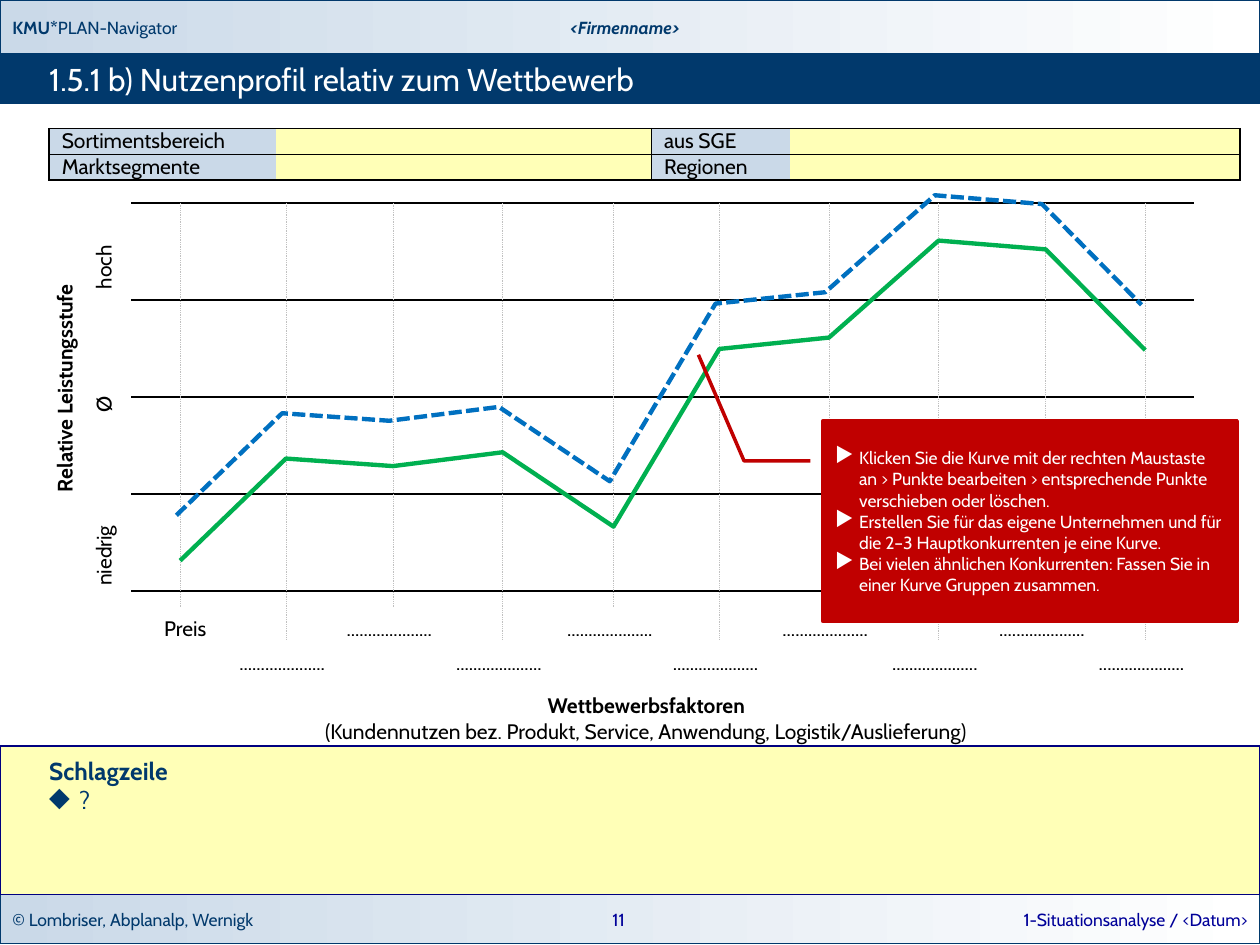
import pptx
import pptx.util
import pptx.dml.color
import pptx.enum.dml
import pptx.enum.shapes
import pptx.enum.text
import pptx.oxml
import pptx.oxml.ns
import lxml.etree as etree

Inches = pptx.util.Inches
Pt = pptx.util.Pt
SHAPE = pptx.enum.shapes.MSO_SHAPE
ALIGN = pptx.enum.text.PP_ALIGN
MIDDLE = pptx.enum.text.MSO_ANCHOR.MIDDLE
TOP = pptx.enum.text.MSO_ANCHOR.TOP
DASH = pptx.enum.dml.MSO_LINE
qn = pptx.oxml.ns.qn

NAVY, PALE, CREAM, RED = "01396C", "CAD9E8", "FFFFB7", "C00000"
BLACK, WHITE, BLUE = "000000", "FFFFFF", "000099"


def color(code):
    return pptx.dml.color.RGBColor.from_string(code)


def style(par, size, code, bold=False, slant=False, align=ALIGN.LEFT):
    par.alignment = align
    for run in par.runs:
        font = run.font
        font.name, font.size, font.bold, font.italic = "Cabin", Pt(size), bold, slant
        font.color.rgb = color(code)


def setup(frame, pads=(0.1, 0.05, 0.1, 0.05), hold=MIDDLE):
    frame.word_wrap = True
    frame.vertical_anchor = hold
    frame.margin_left, frame.margin_top, frame.margin_right, frame.margin_bottom = map(Inches, pads)
    return frame


def label(slide, box, text, size, code, pads=(0.1, 0.05, 0.1, 0.05), turn=0, **look):
    shape = slide.shapes.add_textbox(*map(Inches, box))
    shape.rotation = turn
    frame = setup(shape.text_frame, pads)
    frame.text = text
    style(frame.paragraphs[0], size, code, **look)
    return frame


def block(slide, box, fill, edge, width=0.75, kind=SHAPE.RECTANGLE):
    shape = slide.shapes.add_shape(kind, *map(Inches, box))
    shape.shadow.inherit = False
    if fill:
        shape.fill.solid()
        shape.fill.fore_color.rgb = color(fill)
    else:
        shape.fill.gradient()
        shape.fill.gradient_angle = 0
        for stop, code in zip(shape.fill.gradient_stops, (PALE, WHITE)):
            stop.color.rgb = color(code)
    shape.line.color.rgb = color(edge)
    shape.line.width = Pt(width)
    return shape


def bullet(par, char, indent, percent, code):
    props = par._p.get_or_add_pPr()
    props.set("marL", str(Inches(indent)))
    props.set("indent", str(-Inches(indent)))
    tint = etree.SubElement(props, qn("a:buClr"))
    etree.SubElement(tint, qn("a:srgbClr"), val=code)
    etree.SubElement(props, qn("a:buSzPct"), val=str(percent * 1000))
    etree.SubElement(props, qn("a:buChar"), char=char)


def rule(slide, start, end, code, width, dash=None):
    line = slide.shapes.add_connector(
        pptx.enum.shapes.MSO_CONNECTOR.STRAIGHT, *map(Inches, start + end))
    line.line.color.rgb = color(code)
    line.line.width = Pt(width)
    if dash:
        line.line.dash_style = dash
    etree.SubElement(line._element.spPr, qn("a:effectLst"))


def header(slide, box):
    x, y, w, h = box
    band = 0.43
    block(slide, (x, y, w, band), None, NAVY)
    block(slide, (x, y + band, w, h - band), NAVY, NAVY)
    frame = label(slide, (x, y, 3, band), "KMU*", 10, NAVY)
    run = frame.paragraphs[0].add_run()
    run.text = "PLAN-Navigator"
    style(frame.paragraphs[0], 10, NAVY)
    frame.paragraphs[0].runs[0].font.bold = True
    label(slide, (x + 3.19, y, 3.54, band), "<Firmenname>", 10, NAVY,
          bold=True, slant=True, align=ALIGN.CENTER)
    label(slide, (x + 0.39, y + band, w - 0.71, h - band),
          "1.5.1 b) Nutzenprofil relativ zum Wettbewerb", 18, WHITE, pads=(0, 0, 0, 0))


def footer(slide, box):
    x, y, w, h = box
    block(slide, box, None, NAVY)
    label(slide, (x, y, 4, h), "© Lombriser, Abplanalp, Wernigk", 10, NAVY)
    label(slide, (x + 4.67, y, 0.48, h), "11", 10, BLUE, align=ALIGN.CENTER)
    label(slide, (x + w - 3.17, y, 3.17, h), "1-Situationsanalyse / <Datum>",
          10, BLUE, align=ALIGN.RIGHT)


def border(cell, sides):
    props = cell._tc.get_or_add_tcPr()
    for spot, side in enumerate("LRTB"):
        edge = etree.Element(qn("a:ln" + side), w=str(Pt(1)))
        if side in sides:
            fill = etree.SubElement(edge, qn("a:solidFill"))
            etree.SubElement(fill, qn("a:srgbClr"), val=BLACK)
        else:
            etree.SubElement(edge, qn("a:noFill"))
        props.insert(spot, edge)


def scope(slide, box):
    rows = (("Sortimentsbereich", "", "aus SGE", ""),
            ("Marktsegmente", "", "Regionen", ""))
    table = slide.shapes.add_table(2, 4, *map(Inches, box)).table
    table.first_row = table.horz_banding = False
    for col, width in zip(table.columns, (1.8, 2.98, 1.1, 3.57)):
        col.width = Inches(width)
    for r, row in enumerate(rows):
        table.rows[r].height = Inches(box[3] / 2)
        for c, text in enumerate(row):
            cell = table.cell(r, c)
            cell.margin_left = cell.margin_right = Inches(0.1)
            cell.margin_top = cell.margin_bottom = 0
            cell.fill.solid()
            cell.fill.fore_color.rgb = color(PALE if text else CREAM)
            border(cell, "LTB" if text else "RTB")
            par = cell.text_frame.paragraphs[0]
            if text:
                par.text = text
                style(par, 12, BLACK)
            else:
                etree.SubElement(par._p, qn("a:endParaRPr"), sz="1200")


def curve(slide, points, code, dash=None):
    spots = [(Inches(x), Inches(y)) for x, y in points]
    path = slide.shapes.build_freeform(*spots[0])
    path.add_line_segments(spots[1:], close=False)
    shape = path.convert_to_shape()
    shape.shadow.inherit = False
    shape.fill.background()
    shape.line.color.rgb = color(code)
    shape.line.width = Pt(2.5)
    if dash:
        shape.line.dash_style = dash


def profile(slide, box):
    x, y, w, h = box
    # Axis names, turned upright
    for text, left, mid, bold in (("niedrig", -0.22, 2.8, False), ("Ø", -0.22, 1.6, False),
                                  ("hoch", -0.22, 0.51, False),
                                  ("Relative Leistungsstufe", -0.53, 1.47, True)):
        label(slide, (x + left - 1, y + mid - 0.15, 2, 0.3), text, 12, BLACK,
              turn=270, bold=bold, align=ALIGN.CENTER)
    frame = label(slide, (x + 1.29, y + 3.84, 5.6, 0.5), "Wettbewerbsfaktoren",
                  12, BLACK, bold=True, align=ALIGN.CENTER)
    par = frame.add_paragraph()
    par.text = "(Kundennutzen bez. Produkt, Service, Anwendung, Logistik/Auslieferung)"
    style(par, 12, BLACK, align=ALIGN.CENTER)
    # Level lines
    for step in range(5):
        level = y + step * h / 4
        rule(slide, (x, level), (x + w, level), BLACK, 1)
    # Factor lines, with labels on two staggered rows
    steps = (0.39, 1.23, 2.08, 2.95, 3.83, 4.67, 5.54, 6.41, 7.26, 8.05)
    for i, step in enumerate(steps):
        drop = i % 2
        rule(slide, (x + step, y), (x + step, y + 3.21 + 0.26 * drop),
             "C0C0C0", 0.5, DASH.ROUND_DOT)
        shift = 0.5 if i else 0.43
        label(slide, (x + step - shift, y + 3.22 + 0.27 * drop, 0.94, 0.31),
              "." * 20 if i else "Preis", 12, BLACK, align=ALIGN.CENTER)
    # Own curve, the hint, then the rival's curve
    ranks = (2.84, 2.03, 2.09, 1.98, 2.57, 1.16, 1.07, 0.3, 0.37, 1.17)
    points = [(x + step, y + rank) for step, rank in zip(steps, ranks)]
    curve(slide, points, "00B050")
    hint(slide, (x + 5.49, y + 1.73, 3.29, 1.59))
    curve(slide, [(px - 0.03, py - 0.36) for px, py in points], "0070C0", DASH.SQUARE_DOT)


def hint(slide, box):
    shape = block(slide, box, RED, RED, 2, SHAPE.LINE_CALLOUT_2)
    for i, value in enumerate((0.2, -0.03, 0.2, -0.19, -0.33, -0.3)):
        shape.adjustments[i] = value
    frame = setup(shape.text_frame, (0.1, 0.04, 0.1, 0.04))
    frame.text = "\n".join((
        "Klicken Sie die Kurve mit der rechten Maustaste an > Punkte bearbeiten > "
        "entsprechende Punkte verschieben oder löschen.",
        "Erstellen Sie für das eigene Unternehmen und für die 2–3 Hauptkonkurrenten "
        "je eine Kurve.",
        "Bei vielen ähnlichen Konkurrenten: Fassen Sie in einer Kurve Gruppen zusammen."))
    for par in frame.paragraphs:
        bullet(par, "▶", 0.19, 120, WHITE)
        style(par, 10, WHITE)


def summary(slide, box):
    shape = block(slide, box, CREAM, "000080")
    frame = setup(shape.text_frame, (0.39, 0.08, 0.2, 0.08), TOP)
    frame.text = "Schlagzeile\n?"
    head, item = frame.paragraphs
    style(head, 14, NAVY, bold=True)
    bullet(item, "◆", 0.24, 110, NAVY)
    style(item, 14, NAVY)


def main():
    deck = pptx.Presentation()
    deck.slide_width, deck.slide_height = Inches(10), Inches(7.5)
    slide = deck.slides.add_slide(deck.slide_layouts[6])
    header(slide, (0, 0, 10, 0.82))
    footer(slide, (0, 7.1, 10, 0.39))
    scope(slide, (0.39, 1.02, 9.45, 0.41))
    profile(slide, (1.04, 1.61, 8.44, 3.08))
    summary(slide, (0, 5.92, 10, 1.18))
    deck.save("out.pptx")


if __name__ == "__main__":
    main()
